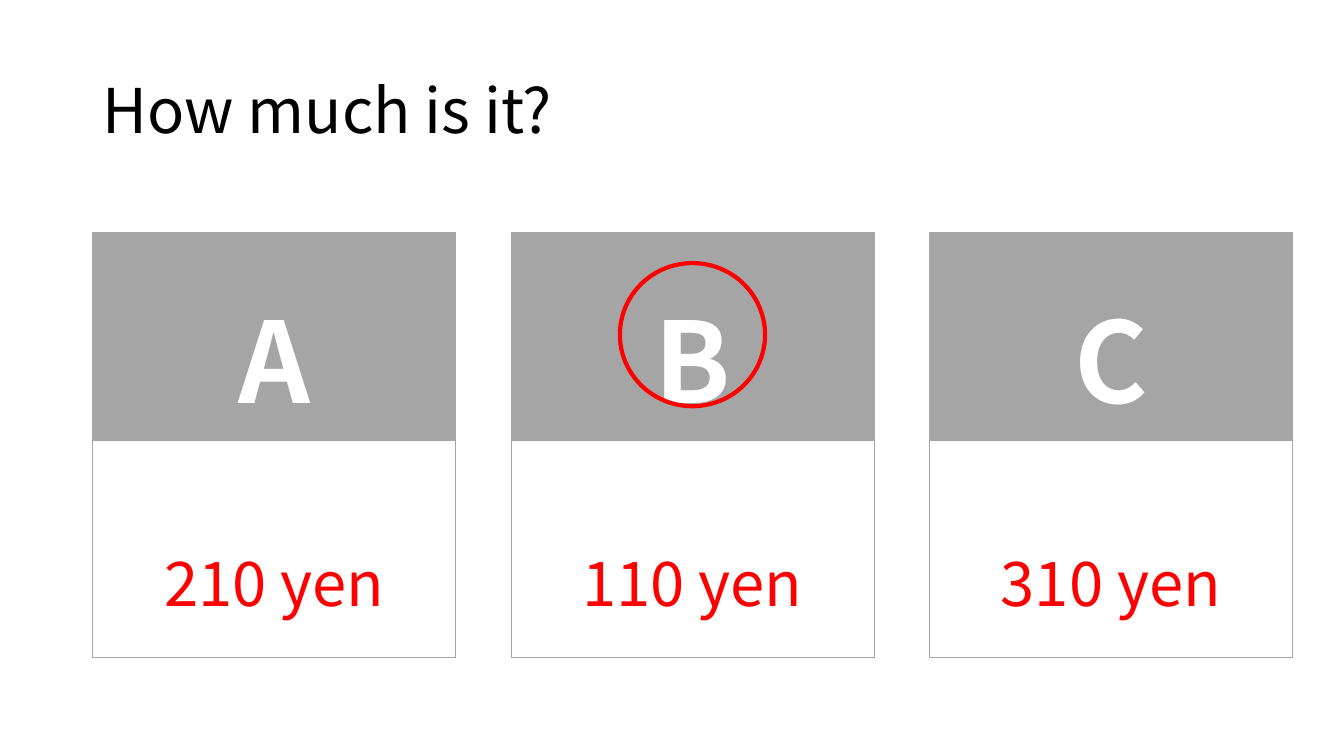
import pptx
import pptx.util
import pptx.dml.color
import pptx.enum.shapes
import pptx.enum.text
import pptx.oxml.ns
from lxml import etree

Pt = pptx.util.Pt
ALIGN = pptx.enum.text.PP_ALIGN
ANCHOR = pptx.enum.text.MSO_ANCHOR
FONT = "Noto Sans CJK JP"
COLORS = {"ink": "000000", "gray": "A5A5A5", "white": "FFFFFF", "red": "FF0000"}
PRICES = [("A", "210 yen"), ("B", "110 yen"), ("C", "310 yen")]
ANSWER = 1
CARD_W, HEAD_H, BODY_H = 259.2, 149, 154.8
LEFT, TOP, STEP = 66.24, 165.6, 298.8


def rgb(name):
    return pptx.dml.color.RGBColor.from_string(COLORS[name])


def write(frame, text, size, color, align, bold=False):
    frame.text = text
    par = frame.paragraphs[0]
    par.alignment = align
    font = par.runs[0].font
    font.name, font.size, font.bold = FONT, Pt(size), bold
    font.color.rgb = rgb(color)


def add_title(slide, text, x, y, w, h):
    title = slide.shapes.title
    title.left, title.top, title.width, title.height = Pt(x), Pt(y), Pt(w), Pt(h)
    frame = title.text_frame
    write(frame, text, 44, "ink", ALIGN.LEFT)
    frame.auto_size = pptx.enum.text.MSO_AUTO_SIZE.NONE
    frame.vertical_anchor = ANCHOR.MIDDLE
    frame.paragraphs[0].line_spacing = 0.9


def add_edges(cell):
    """Give all four sides of a cell a thin gray border."""
    qn = pptx.oxml.ns.qn
    props = cell._tc.get_or_add_tcPr()
    for side in "LRTB":
        line = etree.SubElement(props, qn("a:ln" + side), w=str(int(Pt(0.5))))
        fill = etree.SubElement(line, qn("a:solidFill"))
        etree.SubElement(fill, qn("a:srgbClr"), val=COLORS["gray"])


def add_card(slide, letter, price, x, y, w):
    """Draw a one-column table with a letter above its price."""
    frame = slide.shapes.add_table(2, 1, Pt(x), Pt(y), Pt(w), Pt(HEAD_H + BODY_H))
    table = frame.table
    rows = [
        (letter, HEAD_H, 29.5, 80, "white", "gray", True),
        (price, BODY_H, 67.3, 44, "red", "white", False),
    ]
    for i, (text, high, gap, size, color, back, bold) in enumerate(rows):
        table.rows[i].height = Pt(high)
        cell = table.cell(i, 0)
        add_edges(cell)
        cell.fill.solid()
        cell.fill.fore_color.rgb = rgb(back)
        cell.margin_top = Pt(gap)
        cell.vertical_anchor = ANCHOR.TOP
        write(cell.text_frame, text, size, color, ALIGN.CENTER, bold)


def add_ring(slide, x, y, w, h):
    oval = pptx.enum.shapes.MSO_SHAPE.OVAL
    ring = slide.shapes.add_shape(oval, Pt(x), Pt(y), Pt(w), Pt(h))
    ring.shadow.inherit = False
    ring.fill.background()
    ring.line.color.rgb = rgb("red")
    ring.line.width = Pt(3)


def main():
    deck = pptx.Presentation()
    deck.slide_width, deck.slide_height = Pt(960), Pt(540)
    slide = deck.slides.add_slide(deck.slide_layouts[5])
    add_title(slide, "How much is it?", LEFT, 28.8, 828, 104.4)
    for i, (letter, price) in enumerate(PRICES):
        add_card(slide, letter, price, LEFT + i * STEP, TOP, CARD_W)
    add_ring(slide, LEFT + ANSWER * STEP + 77.76, TOP + 22.32, 103.68, 102.24)
    deck.save("out.pptx")


if __name__ == "__main__":
    main()
